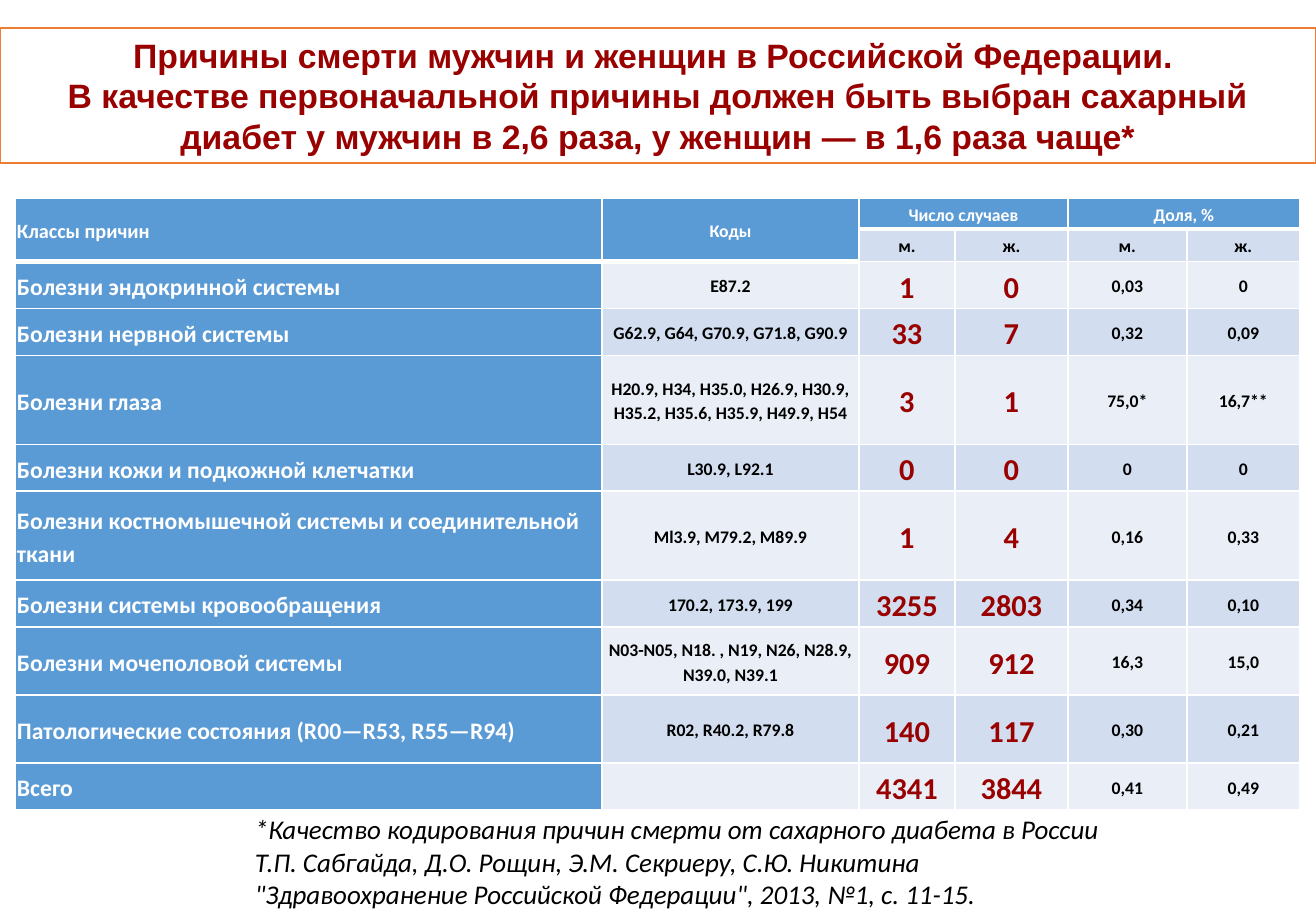
import pptx
import pptx.dml.color
import pptx.enum.shapes
import pptx.enum.text
import pptx.oxml
import pptx.oxml.ns
import pptx.util

EMU_PER_PX = 7526
ALIGN = pptx.enum.text.PP_ALIGN
ANCHOR = pptx.enum.text.MSO_ANCHOR

WHITE, BLACK, DARK_RED, ORANGE = "FFFFFF", "000000", "990000", "ED7D31"
BLUE, LIGHT_BAND, DARK_BAND = "5B9BD5", "EAEFF7", "D2DEEF"

TITLE = [
    "Причины смерти мужчин и женщин в Российской Федерации. ",
    "В качестве первоначальной причины должен быть выбран сахарный диабет "
    "у мужчин в 2,6 раза, у женщин — в 1,6 раза чаще*",
]
CITATION = [
    "*Качество кодирования причин смерти от сахарного диабета в России",
    "Т.П. Сабгайда, Д.О. Рощин, Э.М. Секриеру, С.Ю. Никитина",
    '"Здравоохранение Российской Федерации", 2013, №1, с. 11-15.',
]
COLUMN_WIDTHS = [587, 257, 96, 113, 119, 113]
ROW_HEIGHTS = [31, 31, 47, 47, 89, 47, 89, 47, 68, 68, 47]
CAUSES = [
    ["Классы причин", "Коды", "Число случаев", "", "Доля, %", ""],
    ["", "", "м.", "ж.", "м.", "ж."],
    ["Болезни эндокринной системы", "Е87.2", "1", "0", "0,03", "0"],
    ["Болезни нервной системы", "G62.9, G64, G70.9, G71.8, G90.9",
     "33", "7", "0,32", "0,09"],
    ["Болезни глаза",
     "Н20.9, Н34, Н35.0, Н26.9, Н30.9, Н35.2, Н35.6, Н35.9, Н49.9, Н54",
     "3", "1", "75,0*", "16,7**"],
    ["Болезни кожи и подкожной клетчатки", "L30.9, L92.1", "0", "0", "0", "0"],
    ["Болезни костномышечной системы и соединительной ткани",
     "Ml3.9, М79.2, М89.9", "1", "4", "0,16", "0,33"],
    ["Болезни системы кровообращения", "170.2, 173.9, 199",
     "3255", "2803", "0,34", "0,10"],
    ["Болезни мочеполовой системы",
     "N03-N05, N18. , N19, N26, N28.9, N39.0, N39.1",
     "909", "912", "16,3", "15,0"],
    ["Патологические состояния (R00—R53, R55—R94)", "R02, R40.2, R79.8",
     "140", "117", "0,30", "0,21"],
    ["Всего", "", "4341", "3844", "0,41", "0,49"],
]
HEADER_SPANS = [((0, 0), (1, 0)), ((0, 1), (1, 1)),
                ((0, 2), (0, 3)), ((0, 4), (0, 5))]


def px(length):
    return pptx.util.Emu(length * EMU_PER_PX)


def rgb(value):
    return pptx.dml.color.RGBColor.from_string(value)


def paint(fill, color):
    fill.solid()
    fill.fore_color.rgb = rgb(color)


def write(frame, lines, *, size, color, font="Calibri", bold=False, italic=False,
          align=ALIGN.LEFT, spacing=None, after=None):
    for index, line in enumerate(lines):
        paragraph = frame.add_paragraph() if index else frame.paragraphs[0]
        paragraph.alignment = align
        paragraph.line_spacing = spacing
        paragraph.space_after = after
        run = paragraph.add_run()
        run.text = line
        run.font.name = font
        run.font.size = pptx.util.Pt(size)
        run.font.bold = bold
        run.font.italic = italic
        run.font.color.rgb = rgb(color)


def add_title(slide):
    banner = slide.shapes.add_shape(pptx.enum.shapes.MSO_SHAPE.RECTANGLE,
                                    px(0), px(28), px(1316), px(135))
    banner.shadow.inherit = False
    paint(banner.fill, WHITE)
    banner.line.color.rgb = rgb(ORANGE)
    banner.line.width = pptx.util.Pt(1)
    banner.text_frame.word_wrap = True
    banner.text_frame.vertical_anchor = ANCHOR.MIDDLE
    write(banner.text_frame, TITLE, size=20, color=DARK_RED, font="Arial",
          bold=True, align=ALIGN.CENTER)


def add_citation(slide):
    citation = slide.shapes.add_textbox(px(243), px(807), px(889), px(111))
    citation.text_frame.word_wrap = False
    citation.text_frame.auto_size = pptx.enum.text.MSO_AUTO_SIZE.SHAPE_TO_FIT_TEXT
    write(citation.text_frame, CITATION, size=16, color=BLACK, italic=True)


def is_header(row, column):
    return row == 0 or (row == 1 and column < 2)


def cell_colors(row, column):
    """Return the fill and text colours of a cell."""
    if is_header(row, column) or column == 0:
        return BLUE, WHITE
    band = DARK_BAND if row % 2 else LIGHT_BAND
    return band, DARK_RED if row > 1 and column in (2, 3) else BLACK


def text_size(row, column):
    if column == 0:
        return 14 if row else 12
    return 18 if row > 1 and column in (2, 3) else 10.5


def add_borders(cell, row, column):
    """Draw white cell edges, heavier under the header."""
    widths = {
        "lnL": 1,
        "lnR": 1,
        "lnT": 3 if row and is_header(row - 1, column) else 1,
        "lnB": 3 if is_header(row, column) else 1,
    }
    properties = cell._tc.get_or_add_tcPr()
    for edge, width in widths.items():
        properties.append(pptx.oxml.parse_xml(
            f'<a:{edge} {pptx.oxml.ns.nsdecls("a")} w="{pptx.util.Pt(width)}">'
            f'<a:solidFill><a:srgbClr val="{WHITE}"/></a:solidFill></a:{edge}>'))


def format_cell(cell, row, column, text):
    fill_color, text_color = cell_colors(row, column)
    add_borders(cell, row, column)
    paint(cell.fill, fill_color)
    cell.margin_left = cell.margin_right = px(2)
    cell.margin_top = cell.margin_bottom = px(2)
    cell.vertical_anchor = ANCHOR.MIDDLE
    if text:
        write(cell.text_frame, [text], size=text_size(row, column),
              color=text_color, bold=True,
              align=ALIGN.CENTER if column else ALIGN.LEFT,
              spacing=1.15, after=pptx.util.Pt(10))


def add_causes_table(slide):
    causes = slide.shapes.add_table(
        len(ROW_HEIGHTS), len(COLUMN_WIDTHS), px(15), px(198),
        px(sum(COLUMN_WIDTHS)), px(sum(ROW_HEIGHTS))).table
    for column, width in zip(causes.columns, COLUMN_WIDTHS):
        column.width = px(width)
    for row, height in zip(causes.rows, ROW_HEIGHTS):
        row.height = px(height)
    for start, end in HEADER_SPANS:
        causes.cell(*start).merge(causes.cell(*end))
    for row, values in enumerate(CAUSES):
        for column, text in enumerate(values):
            format_cell(causes.cell(row, column), row, column, text)


def main():
    presentation = pptx.Presentation()
    presentation.slide_width = px(1316)
    presentation.slide_height = px(911)
    slide = presentation.slides.add_slide(presentation.slide_layouts[6])
    add_causes_table(slide)
    add_title(slide)
    add_citation(slide)
    presentation.save("out.pptx")


if __name__ == "__main__":
    main()
